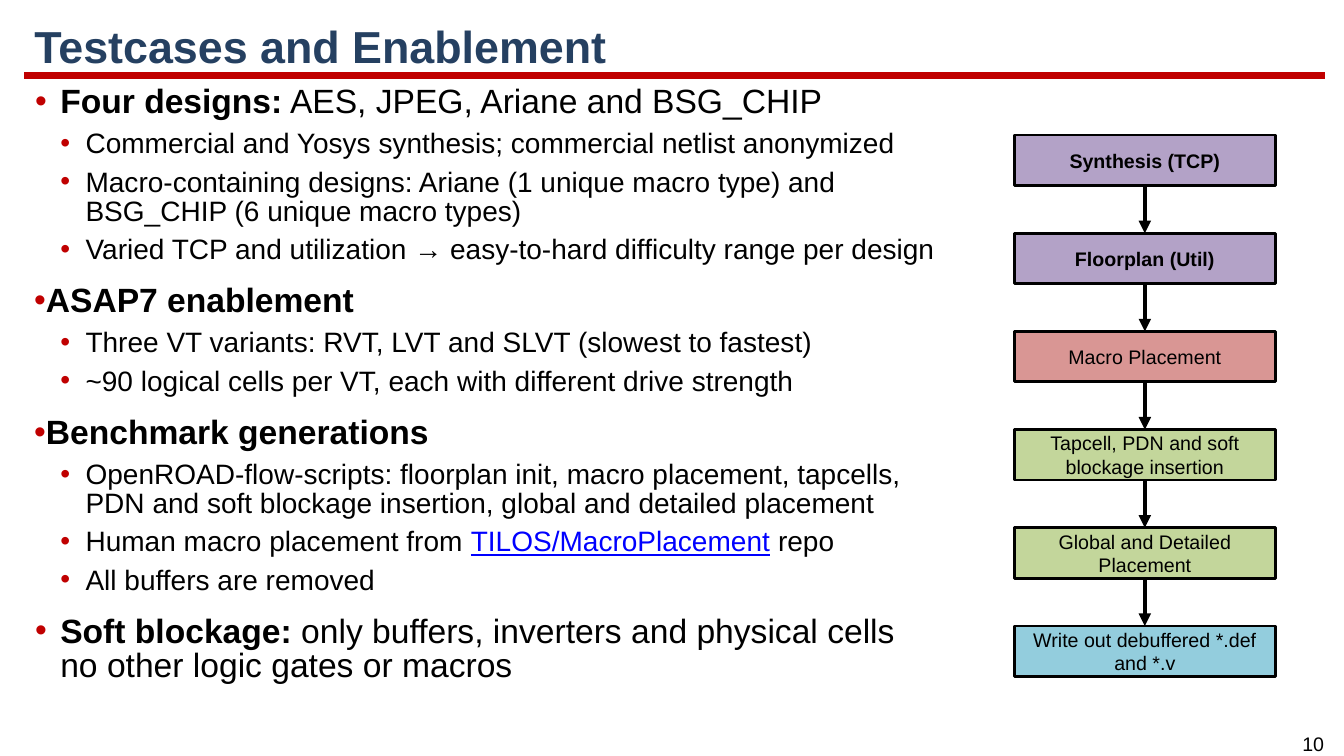
import pptx
import pptx.dml.color
import pptx.enum.shapes
import pptx.enum.text
import pptx.oxml
import pptx.util
from lxml import etree
from pptx.util import Inches

COLORS = {
    "title": "254061", "accent": "C00000", "text": "000000", "link": "0000FF",
    "setup": "B3A2C7", "macro": "D99694", "place": "C3D69B", "output": "93CDDD",
}
FONT = "Arial"

# Outline kind: left margin in inches, size and space before in points
HEAD, TIGHT_HEAD, POINT = (0.26, 24, 14.4), (0.01, 24, 14.4), (0.51, 20, 7.2)

# Each entry: kind, then (text, style) runs
OUTLINE = [
    (HEAD, [("Four designs:", "bold"), (" AES, JPEG, Ariane and BSG_CHIP", "")]),
    (POINT, [("Commercial and Yosys synthesis; commercial netlist anonymized", "")]),
    (POINT, [("Macro-containing designs: Ariane (1 unique macro type) and "
              "BSG_CHIP (6 unique macro types)", "")]),
    (POINT, [("Varied TCP and utilization → easy-to-hard difficulty range per design", "")]),
    (TIGHT_HEAD, [("ASAP7 enablement", "bold")]),
    (POINT, [("Three VT variants: RVT, LVT and SLVT (slowest to fastest)", "")]),
    (POINT, [("~90 logical cells per VT, each with different drive strength", "")]),
    (TIGHT_HEAD, [("Benchmark generations", "bold")]),
    (POINT, [("OpenROAD-flow-scripts: floorplan init, macro placement, tapcells, "
              "PDN and soft blockage insertion, global and detailed placement", "")]),
    (POINT, [("Human macro placement from ", ""), ("TILOS/MacroPlacement", "link"),
             (" repo", "")]),
    (POINT, [("All buffers are removed", "")]),
    (HEAD, [("Soft blockage:", "bold"),
            (" only buffers, inverters and physical cells", ""),
            ("no other logic gates or macros", "new line")]),
]

# Flow steps from top to bottom: text, fill, bold
FLOW = [
    ("Synthesis (TCP)", "setup", True),
    ("Floorplan (Util)", "setup", True),
    ("Macro Placement", "macro", False),
    ("Tapcell, PDN and soft blockage insertion", "place", False),
    ("Global and Detailed Placement", "place", False),
    ("Write out debuffered *.def and *.v", "output", False),
]
FLOW_LEFT, FLOW_TOP, FLOW_LAST_TOP = 10.06, 1.34, 6.21
STEP_WIDTH, STEP_HEIGHT = 2.59, 0.5


def rgb(name):
    return pptx.dml.color.RGBColor.from_string(COLORS[name])


def set_font(font, size, color="text", bold=None):
    font.name = FONT
    font.size = pptx.util.Pt(size)
    font.color.rgb = rgb(color)
    font.bold = bold


def add_title(slide, text):
    title = slide.shapes.title
    title.left, title.top = Inches(0.24), Inches(0.16)
    title.width, title.height = Inches(12.91), Inches(0.65)
    frame = title.text_frame
    frame.text = text
    frame.auto_size = pptx.enum.text.MSO_AUTO_SIZE.NONE
    frame.vertical_anchor = pptx.enum.text.MSO_ANCHOR.MIDDLE
    paragraph = frame.paragraphs[0]
    paragraph.alignment = pptx.enum.text.PP_ALIGN.LEFT
    paragraph.line_spacing = 0.9
    set_font(paragraph.font, 32, "title", True)


def add_line(slide, start, end, color, width):
    line = slide.shapes.add_connector(
        pptx.enum.shapes.MSO_CONNECTOR.STRAIGHT,
        *(Inches(value) for value in start + end))
    line.line.color.rgb = rgb(color)
    line.line.width = pptx.util.Pt(width)
    etree.SubElement(line._element.spPr, pptx.oxml.ns.qn("a:effectLst"))
    return line


def add_bullet(paragraph, margin):
    properties = paragraph._p.get_or_add_pPr()
    properties.set("marL", str(Inches(margin)))
    properties.set("indent", str(Inches(-0.25)))
    qn = pptx.oxml.ns.qn
    color = etree.SubElement(properties, qn("a:buClr"))
    etree.SubElement(color, qn("a:srgbClr"), val=COLORS["accent"])
    etree.SubElement(properties, qn("a:buFont"), typeface=FONT)
    etree.SubElement(properties, qn("a:buChar"), char="•")


def add_outline(slide):
    box = slide.shapes.add_textbox(Inches(0.24), Inches(0.81), Inches(9.21), Inches(6.44))
    frame = box.text_frame
    frame.word_wrap = True
    for index, ((margin, size, space), runs) in enumerate(OUTLINE):
        paragraph = frame.add_paragraph() if index else frame.paragraphs[0]
        paragraph.level = 1 if margin == POINT[0] else 0
        paragraph.line_spacing = 0.85
        paragraph.space_before = pptx.util.Pt(space if index else 0)
        add_bullet(paragraph, margin)
        set_font(paragraph.font, size)
        for text, style in runs:
            if style == "new line":
                paragraph.add_line_break()
            run = paragraph.add_run()
            run.text = text
            if style == "bold":
                run.font.bold = True
            elif style == "link":
                run.font.underline = True
                run.font.color.rgb = rgb("link")


def add_step(slide, top, text, fill, bold):
    step = slide.shapes.add_shape(
        pptx.enum.shapes.MSO_SHAPE.RECTANGLE, Inches(FLOW_LEFT), Inches(top),
        Inches(STEP_WIDTH), Inches(STEP_HEIGHT))
    step.shadow.inherit = False
    step.fill.solid()
    step.fill.fore_color.rgb = rgb(fill)
    step.line.color.rgb = rgb("text")
    step.line.width = pptx.util.Pt(2)
    frame = step.text_frame
    frame.text = text
    frame.word_wrap = True
    frame.vertical_anchor = pptx.enum.text.MSO_ANCHOR.MIDDLE
    paragraph = frame.paragraphs[0]
    paragraph.alignment = pptx.enum.text.PP_ALIGN.CENTER
    set_font(paragraph.font, 14, bold=bold)
    return step


def add_arrow(slide, upper, lower):
    arrow = add_line(slide, (0, 0), (0, 0), "text", 3)
    arrow.begin_connect(upper, 2)
    arrow.end_connect(lower, 0)
    outline = arrow.line._get_or_add_ln()
    etree.SubElement(outline, pptx.oxml.ns.qn("a:tailEnd"), type="triangle")


def add_flow(slide):
    pitch = (FLOW_LAST_TOP - FLOW_TOP) / (len(FLOW) - 1)
    steps = [add_step(slide, FLOW_TOP + index * pitch, *step)
             for index, step in enumerate(FLOW)]
    for upper, lower in zip(steps, steps[1:]):
        add_arrow(slide, upper, lower)


def add_page_number(slide, number):
    box = slide.shapes.add_textbox(Inches(12.73), Inches(7.21), Inches(0.59), Inches(0.34))
    frame = box.text_frame
    frame.word_wrap = True
    frame.text = number
    paragraph = frame.paragraphs[0]
    paragraph.alignment = pptx.enum.text.PP_ALIGN.CENTER
    set_font(paragraph.font, 14)


def main():
    deck = pptx.Presentation()
    deck.slide_width, deck.slide_height = Inches(13.33), Inches(7.5)
    slide = deck.slides.add_slide(deck.slide_layouts.get_by_name("Title Only"))

    # Heading and its rule
    add_title(slide, "Testcases and Enablement")
    add_line(slide, (0.24, 0.75), (13.14, 0.75), "accent", 4.5)

    # Outline on the left, flow on the right
    add_outline(slide)
    add_flow(slide)

    # Footer
    add_page_number(slide, "10")
    deck.save("out.pptx")


if __name__ == "__main__":
    main()
